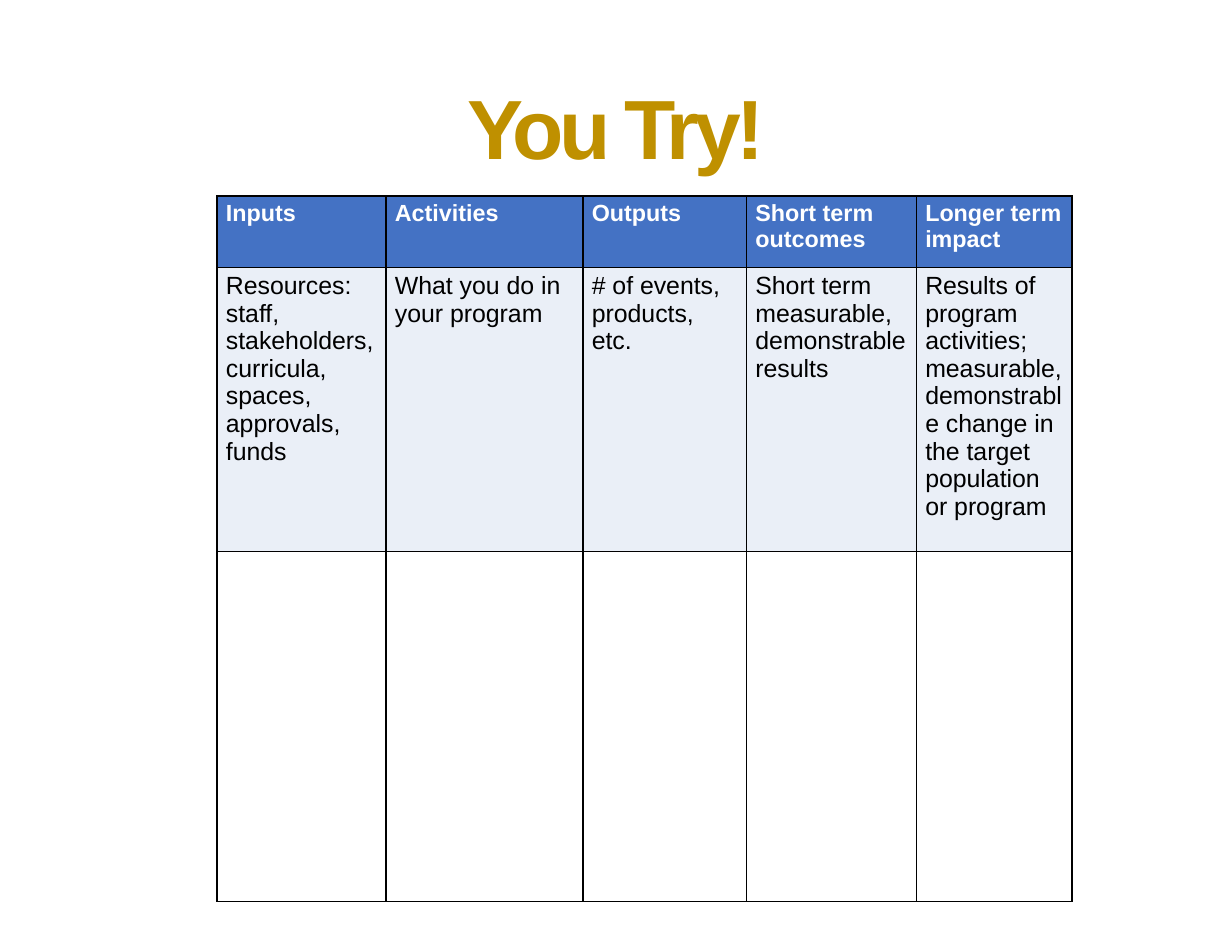
"""Build the "You Try!" logic model worksheet slide."""
import pptx
import pptx.dml.color
import pptx.enum.text
import pptx.oxml
import pptx.oxml.ns
import pptx.util

Pt = pptx.util.Pt


def rgb(color):
    return pptx.dml.color.RGBColor.from_string(color)


class Deck:
    font = "Arial"
    gold, blue, pale, white, black = "BF9000", "4472C4", "EAEFF7", "FFFFFF", "000000"

    def __init__(self, width, height):
        self.prs = pptx.Presentation()
        self.prs.slide_width, self.prs.slide_height = Pt(width), Pt(height)
        self.s = self.prs.slides.add_slide(self.prs.slide_layouts[5])

    def style(self, p, size, color, bold=False):
        f = p.font
        f.name, f.size, f.bold = self.font, Pt(size), bold
        f.color.rgb = rgb(color)

    def title(self, text, left, top, width, height):
        sp = self.s.shapes.title
        sp.left, sp.top, sp.width, sp.height = Pt(left), Pt(top), Pt(width), Pt(height)
        tf = sp.text_frame
        tf.text = text
        tf.vertical_anchor = pptx.enum.text.MSO_ANCHOR.MIDDLE
        p = tf.paragraphs[0]
        p.alignment = pptx.enum.text.PP_ALIGN.CENTER
        self.style(p, 54, self.gold, True)
        p.runs[0].font._element.set("spc", "-300")

    def border(self, cell):
        tcPr = cell._tc.get_or_add_tcPr()
        for side in "LRTB":
            tcPr.append(pptx.oxml.parse_xml(
                f'<a:ln{side} {pptx.oxml.ns.nsdecls("a")} w="12700"><a:solidFill>'
                f'<a:srgbClr val="{self.black}"/></a:solidFill></a:ln{side}>'))

    def cell(self, cell, text, fill, size, color, bold):
        cell.margin_left = cell.margin_right = Pt(5.76)
        cell.margin_top = cell.margin_bottom = Pt(2.88)
        self.border(cell)
        cell.fill.solid()
        cell.fill.fore_color.rgb = rgb(fill)
        if text:
            cell.text = text
            for p in cell.text_frame.paragraphs:
                self.style(p, size, color, bold)

    def table(self, rows, left, top, widths, heights, styles):
        table = self.s.shapes.add_table(
            len(rows), len(widths), Pt(left), Pt(top), Pt(sum(widths)), Pt(sum(heights))).table
        table.first_row = table.horz_banding = False
        for column, width in zip(table.columns, widths):
            column.width = Pt(width)
        for i, (texts, height, style) in enumerate(zip(rows, heights, styles)):
            table.rows[i].height = Pt(height)
            for j, text in enumerate(texts):
                self.cell(table.cell(i, j), text, *style)


def main():
    deck = Deck(792, 612)
    deck.title("You Try!", 90, 36, 612, 90)
    rows = [
        ["Inputs", "Activities", "Outputs", "Short term outcomes", "Longer term impact"],
        ["Resources:\nstaff, stakeholders, curricula, spaces, approvals, funds",
         "What you do in your program",
         "# of events, products, etc.",
         "Short term measurable, demonstrable results",
         "Results of program activities; measurable, demonstrable change "
         "in the target population or program"],
        [""] * 5,
    ]
    styles = [
        (deck.blue, 15, deck.white, True),
        (deck.pale, 16, deck.black, False),
        (deck.white, 16, deck.black, False),
    ]
    deck.table(rows, 139.5, 126, [108.6, 126.6, 105.2, 109.2, 100], [46, 182.6, 225], styles)
    deck.prs.save("out.pptx")


if __name__ == "__main__":
    main()
